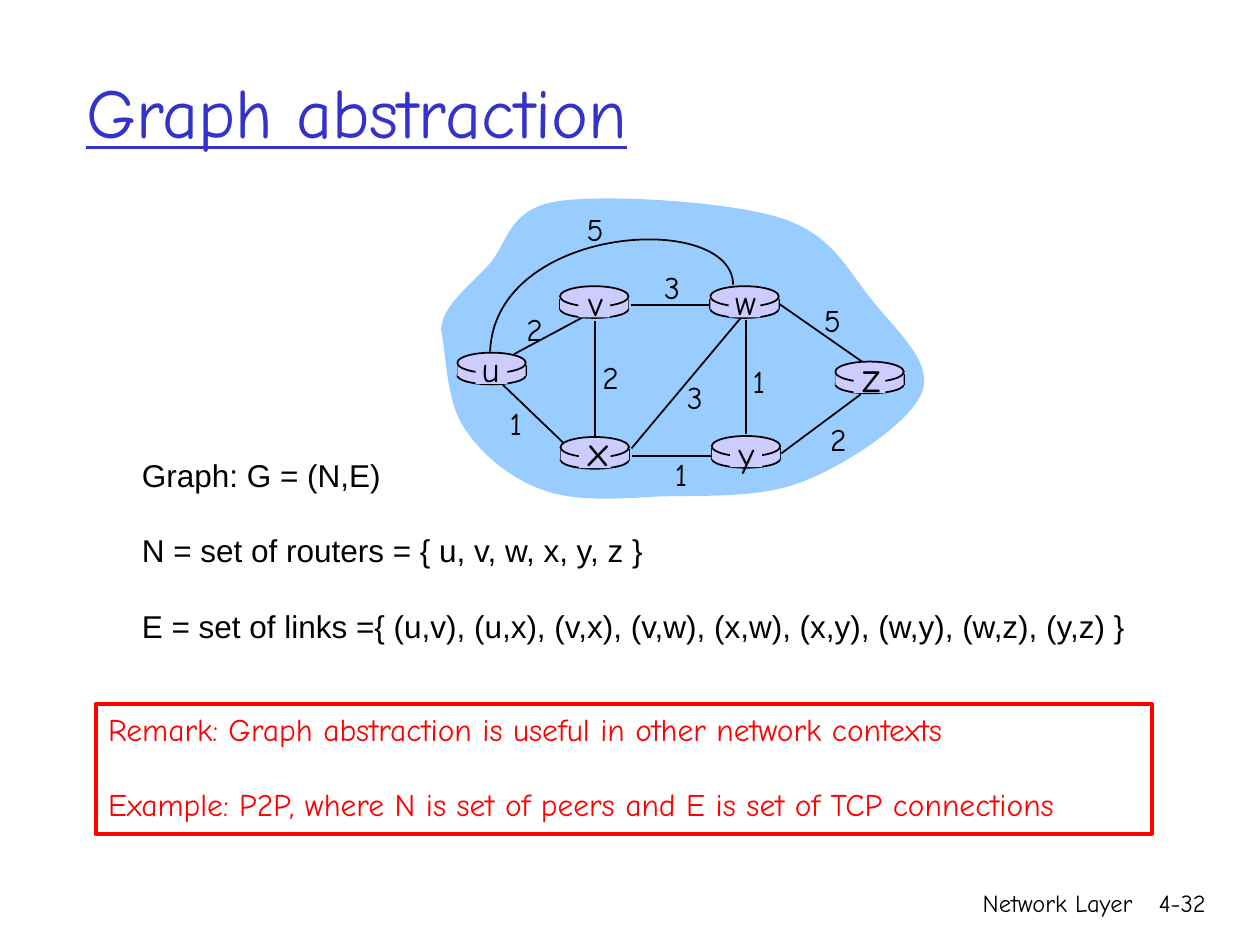
from lxml.etree import SubElement
from pptx import Presentation
from pptx.dml.color import RGBColor
from pptx.enum.shapes import MSO_CONNECTOR as Connector, MSO_SHAPE as Shape
from pptx.enum.text import MSO_ANCHOR as Anchor, MSO_AUTO_SIZE as AutoSize, PP_ALIGN as Align
from pptx.oxml.ns import qn
from pptx.util import Cm, Pt

COMIC, ARIAL = "Comic Neue", "Arial"
BLACK, RED, TITLE_BLUE = "000000", "FF0000", "3333CC"
CLOUD_BLUE, ROUTER_LILAC = "99CCFF", "CCCCFF"

TITLE = "Graph abstraction"
DEFINITIONS = [
    "Graph: G = (N,E)",
    "N = set of routers = { u, v, w, x, y, z }",
    "E = set of links ={ (u,v), (u,x), (v,x), (v,w), (x,w), (x,y), (w,y), (w,z), (y,z) }",
]
REMARKS = [
    "Remark: Graph abstraction is useful in other network contexts",
    "Example: P2P, where N is set of peers and E is set of TCP connections",
]
FOOTERS = [("Network Layer", 15.03, 8.05), ("4-32", 22.68, 1.88)]

ROUTERS = [
    ("u", 20, (9.22, 7.11), (9.89, 7.43)),
    ("x", 24, (11.3, 8.81), (12.07, 9.07)),
    ("v", 20, (11.29, 5.77), (12.01, 6.09)),
    ("w", 20, (14.32, 5.77), (15.03, 6.08)),
    ("y", 20, (14.35, 8.79), (15.05, 9.14)),
    ("z", 24, (16.84, 7.29), (17.58, 7.57)),
]
LINKS = [
    ((10.36, 7.14), (11.89, 6.32)),
    ((15.04, 6.45), (15.04, 8.74)),
    ((11.99, 6.48), (11.99, 8.84)),
    ((12.73, 9.04), (14.94, 6.4)),
    ((15.75, 9.14), (17.35, 7.95)),
    ((14.35, 9.19), (12.75, 9.19)),
    ((11.35, 8.92), (10.13, 7.75)),
    ((14.33, 6.15), (12.73, 6.15)),
    ((17.42, 7.32), (15.7, 6.12)),
]
COSTS = [
    ("2", 10.78, 6.63), ("2", 12.31, 7.59), ("1", 10.4, 8.53), ("3", 14.01, 8),
    ("1", 13.73, 9.55), ("1", 15.3, 7.67), ("2", 16.9, 8.84), ("5", 16.78, 6.45),
    ("3", 13.55, 5.79), ("5", 12, 4.62),
]
ARC = [(14.78, 5.74), (14.76, 4.24), (9.98, 4.52), (9.88, 7.09)]
CLOUD = [
    (8.89, 6.65), (8.92, 6.15), (9.47, 5.77), (9.86, 5.33),
    (10.24, 4.9), (10.24, 4.22), (11.23, 4.06),
    (12.19, 3.91), (14.68, 4.06), (15.72, 4.39),
    (16.79, 4.72), (17.09, 5.46), (17.58, 6.05),
    (18.03, 6.63), (18.82, 7.29), (18.59, 7.9),
    (18.36, 8.51), (17.09, 9.35), (16.21, 9.7),
    (15.32, 10.06), (14.15, 9.98), (13.26, 10.01),
    (12.4, 10.06), (11.58, 10.11), (10.95, 9.88),
    (10.29, 9.65), (9.68, 9.14), (9.35, 8.61),
    (8.99, 8.08), (8.99, 7.06), (8.89, 6.65),
]

presentation = Presentation()
presentation.slide_width, presentation.slide_height = Cm(25.4), Cm(19.05)
slide = presentation.slides.add_slide(presentation.slide_layouts[6])


def color(value):
    return RGBColor.from_string(value)


def paint(shape, fill=None, line=None, width=1):
    shape.shadow.inherit = False
    if fill:
        shape.fill.solid()
        shape.fill.fore_color.rgb = color(fill)
    else:
        shape.fill.background()
    if line:
        shape.line.color.rgb = color(line)
        shape.line.width = Pt(width)
    else:
        shape.line.fill.background()


def write(shape, lines, size=18, font=COMIC, ink=BLACK, align=Align.LEFT,
          anchor=Anchor.TOP, wrap=False, underline=None, gap=0):
    frame = shape.text_frame
    frame.word_wrap = wrap
    frame.auto_size = AutoSize.NONE
    frame.vertical_anchor = anchor
    for index, line in enumerate(lines):
        paragraph = frame.add_paragraph() if index else frame.paragraphs[0]
        paragraph.alignment = align
        paragraph.space_before = Pt(gap if index else 0)
        run = paragraph.add_run()
        run.text = line
        run.font.size, run.font.name = Pt(size), font
        run.font.underline = underline
        run.font.color.rgb = color(ink)


def text_box(shapes, left, top, width, height, lines, **style):
    box = shapes.add_textbox(Cm(left), Cm(top), Cm(width), Cm(height))
    write(box, lines, **style)


def centred_label(shapes, text, x, y, size):
    width, height = 0.9, size * 0.055
    text_box(shapes, x - width / 2, y - height / 2, width, height, [text],
             size=size, align=Align.CENTER, anchor=Anchor.MIDDLE)


def add_line(shapes, start, end):
    line = shapes.add_connector(Connector.STRAIGHT, *map(Cm, start + end))
    line.line.color.rgb = color(BLACK)
    line.line.width = Pt(1)
    SubElement(line._element.spPr, qn("a:effectLst"))


def add_curve(shapes, controls, closed, **style):
    builder = shapes.build_freeform(*map(Cm, controls[0]))
    builder.add_line_segments([tuple(map(Cm, point)) for point in controls[1:]], close=closed)
    shape = builder.convert_to_shape()
    segments = list(shape._element.iter(qn("a:lnTo")))
    for first in range(0, len(segments), 3):
        curve, *others = segments[first:first + 3]
        curve.tag = qn("a:cubicBezTo")
        for other in others:
            curve.append(other[0])
            other.getparent().remove(other)
    paint(shape, **style)


def add_router(shapes, name, size, corner, centre):
    left, top = corner

    def part(kind, dx, dy, width, height, line=None):
        shape = shapes.add_shape(kind, Cm(left + dx), Cm(top + dy), Cm(width), Cm(height))
        paint(shape, ROUTER_LILAC, line)

    width, side_top, side_height = 1.38, 0.25, 0.22
    part(Shape.OVAL, 0, 0.28, width, 0.36, BLACK)
    for x in (left, left + width):
        add_line(shapes, (x, top + side_top), (x, top + side_top + side_height))
    part(Shape.RECTANGLE, 0, side_top, width, side_height)
    part(Shape.OVAL, 0, 0, width, 0.41, BLACK)
    part(Shape.RECTANGLE, 0.37, 0.05, 0.64, 0.58)
    centred_label(shapes, name, *centre, size)


for text, left, width in FOOTERS:
    text_box(slide.shapes, left, 17.78, width, 1.27, [text],
             size=14, align=Align.RIGHT, wrap=True)

network = slide.shapes.add_group_shape().shapes
add_curve(network, CLOUD, True, fill=CLOUD_BLUE)
for start, end in LINKS:
    add_line(network, start, end)
add_curve(network, ARC, False, line=BLACK)
for router in ROUTERS:
    add_router(network, *router)
for cost, x, y in COSTS:
    centred_label(network, cost, x, y, 18)

text_box(slide.shapes, 2.61, 9.07, 20.55, 4.06, DEFINITIONS, font=ARIAL, gap=21.5)
text_box(slide.shapes, 1.49, 0.64, 21.59, 3.18, [TITLE], size=40, ink=TITLE_BLUE,
         anchor=Anchor.MIDDLE, wrap=True, underline=True)
remark = slide.shapes.add_shape(Shape.RECTANGLE, Cm(1.93), Cm(14.19), Cm(21.29), Cm(2.62))
paint(remark, line=RED, width=2.25)
write(remark, REMARKS, ink=RED, gap=21.5)

presentation.save("out.pptx")
